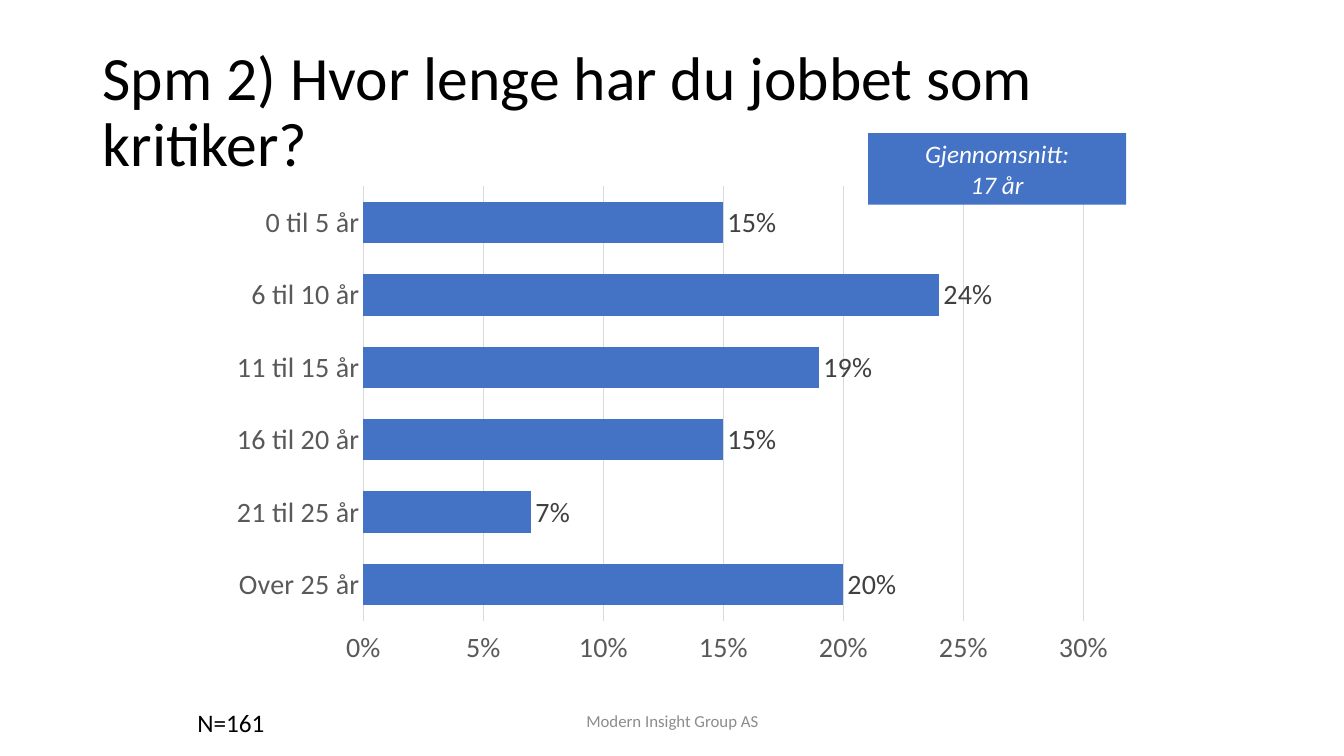
from pptx import Presentation
from pptx import util as u
from pptx.chart.data import CategoryChartData
from pptx.dml.color import RGBColor
from pptx.enum import chart as ch, shapes, text

TITLE = "Spm 2) Hvor lenge har du jobbet som kritiker?"
MEAN = "Gjennomsnitt:\v17 år"
COUNT = "N=161"
FOOTER = "Modern Insight Group AS"
YEARS = {
    "0 til 5 år": 0.15,
    "6 til 10 år": 0.24,
    "11 til 15 år": 0.19,
    "16 til 20 år": 0.15,
    "21 til 25 år": 0.07,
    "Over 25 år": 0.2,
}
FONT, BLUE, GREY, RULE = "Calibri", "4472C4", "595959", "D9D9D9"


def box(*at):
    return [u.Inches(n) for n in at]


def paint(part, color):
    part.solid()
    part.fore_color.rgb = RGBColor.from_string(color)


def style(font, size, color, italic=False):
    font.name, font.size, font.italic = FONT, u.Pt(size), italic
    font.color.rgb = RGBColor.from_string(color)


def write(words, at, size, color, fill=None, italic=False, align="LEFT",
          anchor="MIDDLE", wrap=True, space=1.0):
    if fill:
        shape = slide.shapes.add_shape(shapes.MSO_SHAPE.RECTANGLE, *box(*at))
        shape.shadow.inherit = False
        paint(shape.fill, fill)
        shape.line.fill.background()
    else:
        shape = slide.shapes.add_textbox(*box(*at))
    frame = shape.text_frame
    frame.word_wrap = wrap
    frame.vertical_anchor = text.MSO_ANCHOR[anchor]
    para = frame.paragraphs[0]
    para.text = words
    para.alignment = text.PP_ALIGN[align]
    para.line_spacing = space
    for run in para.runs:
        style(run.font, size, color, italic)


def rule(line):
    paint(line.fill, RULE)
    line.width = u.Pt(0.75)


def plot(at):
    data = CategoryChartData(number_format="0%")
    data.categories = list(YEARS)
    data.add_series("Series 1", list(YEARS.values()))
    chart = slide.shapes.add_chart(
        ch.XL_CHART_TYPE.BAR_CLUSTERED, *box(*at), data).chart
    chart.has_legend = chart.has_title = False
    style(chart.font, 20, "000000")

    cats, vals = chart.category_axis, chart.value_axis
    for axis in (cats, vals):
        axis.major_tick_mark = axis.minor_tick_mark = ch.XL_TICK_MARK.NONE
        style(axis.tick_labels.font, 20, GREY)
    cats.reverse_order = True
    rule(cats.format.line)
    vals.minimum_scale, vals.maximum_scale, vals.major_unit = 0, 0.3, 0.05
    vals.tick_label_position = ch.XL_TICK_LABEL_POSITION.HIGH
    vals.tick_labels.number_format = "0%"
    vals.tick_labels.number_format_is_linked = False
    vals.format.line.fill.background()
    rule(vals.major_gridlines.format.line)

    bars = chart.plots[0]
    bars.gap_width = 75
    bars.vary_by_categories = False
    paint(bars.series[0].format.fill, BLUE)
    bars.has_data_labels = True
    tags = bars.data_labels
    tags.show_value = True
    tags.number_format = "0%"
    tags.number_format_is_linked = False
    tags.position = ch.XL_LABEL_POSITION.OUTSIDE_END
    style(tags.font, 20, "404040")


deck = Presentation()
deck.slide_width, deck.slide_height = box(13.33, 7.5)
slide = deck.slides.add_slide(deck.slide_layouts[6])

write(TITLE, (0.92, 0.4, 11.5, 1.45), 44, "000000", space=0.9)
plot((2.17, 1.75, 9, 4.95))
write(FOOTER, (4.42, 6.95, 4.5, 0.4), 12, "8C8C8C", align="CENTER")
write(COUNT, (1.86, 6.97, 0.87, 0.4), 18, "000000", anchor="TOP", wrap=False)
write(MEAN, (8.61, 1.32, 2.56, 0.71), 18, "FFFFFF", fill=BLUE, italic=True,
      align="CENTER")

deck.save("out.pptx")
